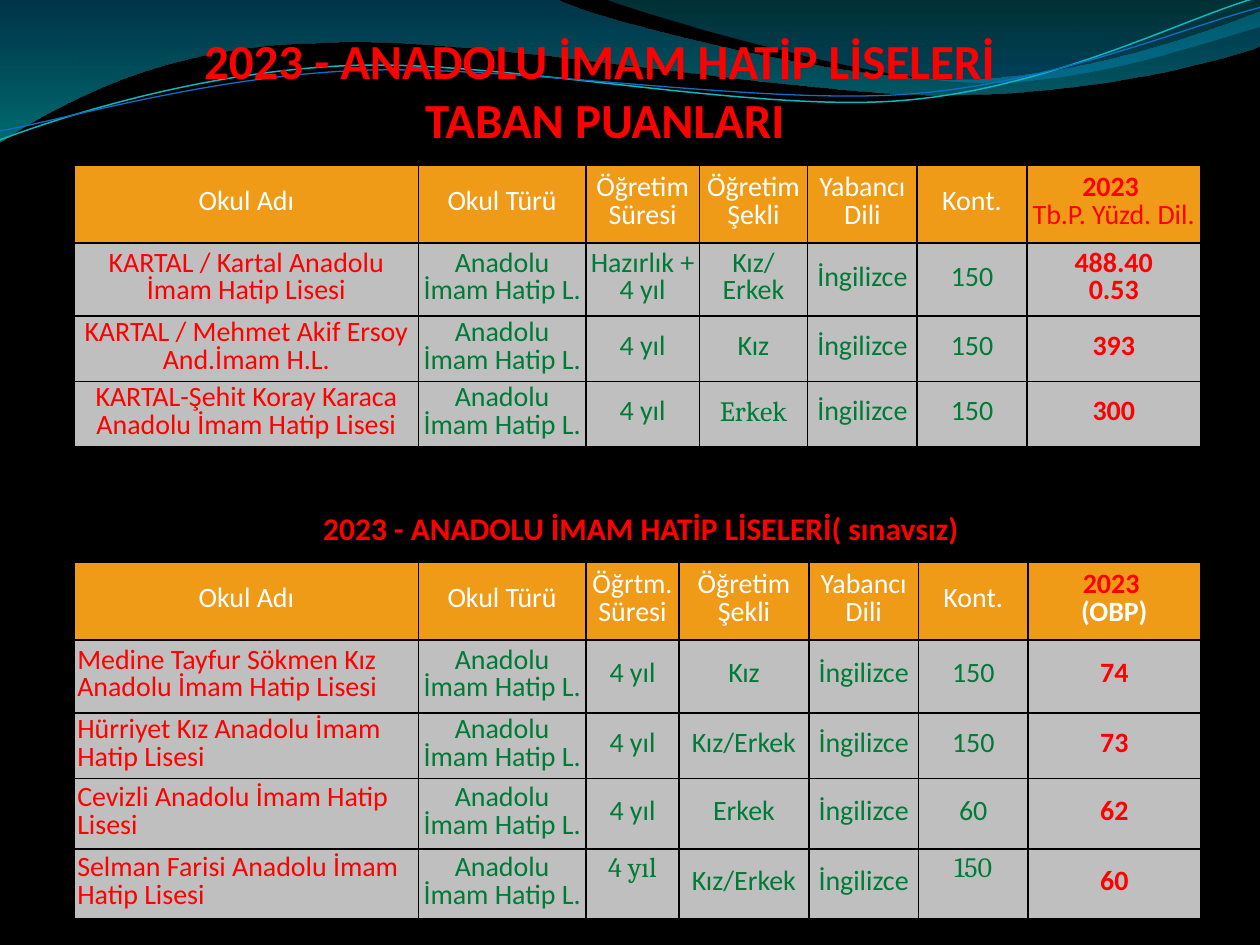
from dataclasses import dataclass
from math import cos, radians, sin
from typing import NamedTuple

from lxml.etree import SubElement
from pptx import Presentation
from pptx.dml.color import RGBColor
from pptx.enum.text import MSO_ANCHOR, MSO_AUTO_SIZE, PP_ALIGN
from pptx.oxml.ns import qn
from pptx.util import Pt

RED, GREEN, WHITE, BLACK = "FF0000", "007A37", "FFFFFF", "000000"
ORANGE, GREY = "EF9B18", "BFBFBF"
GRID_COLUMNS = 10
TILT = 2.7
SCHOOL_TYPE, LANGUAGE = "Anadolu İmam Hatip L.", "İngilizce"

presentation = Presentation()
presentation.slide_width = Pt(720)
presentation.slide_height = Pt(540)
UNIT = presentation.slide_width // GRID_COLUMNS


class Box(NamedTuple):
    left: float
    top: float
    width: float
    height: float


class Stop(NamedTuple):
    position: float
    color: str
    opacity: int


class School(NamedTuple):
    name: str
    duration: str
    mode: str
    quota: str
    score: str


@dataclass
class Wave:
    start: tuple
    segments: list
    stops: tuple = ()
    line: str = ""
    weight: float = 0
    pivot: tuple = ()


@dataclass
class ScoreTable:
    top: float
    columns: list
    rows: list
    duration_title: str
    score_title: str
    subtitle_color: str
    subtitle_bold: bool
    name_align: PP_ALIGN
    schools: list
    serif: tuple = ()
    raised: tuple = ()


def grid(value: float) -> int:
    return round(value * UNIT)


def rgb(color: str) -> RGBColor:
    return RGBColor.from_string(color)


def turn(point: tuple, pivot: tuple) -> tuple:
    x, y = point[0] - pivot[0], point[1] - pivot[1]
    c, s = cos(radians(TILT)), sin(radians(TILT))
    return pivot[0] + x * c - y * s, pivot[1] + x * s + y * c


def curve_segments(shape, segments: list) -> None:
    lines = iter(list(shape._element.iter(qn("a:lnTo"))))
    for segment in segments:
        first = next(lines)
        if len(segment) == 6:
            first.tag
            curve = first.makeelement(qn("a:cubicBezTo"))
            first.addprevious(curve)
            for line in (first, next(lines), next(lines)):
                curve.append(line[0])
                line.getparent().remove(line)


def draw_wave(slide, wave: Wave) -> None:
    points = [wave.start]
    for segment in wave.segments:
        points += zip(segment[::2], segment[1::2])
    if wave.pivot:
        points = [turn(point, wave.pivot) for point in points]
    vertices = [(grid(x), grid(y)) for x, y in points]
    builder = slide.shapes.build_freeform(*vertices[0], scale=1.0)
    builder.add_line_segments(vertices[1:], close=bool(wave.stops))
    shape = builder.convert_to_shape()
    curve_segments(shape, wave.segments)
    shape.shadow.inherit = False
    if not wave.stops:
        shape.rotation = 360 - TILT
        shape.fill.background()
        shape.line.color.rgb = rgb(wave.line)
        shape.line.width = Pt(wave.weight)
        return
    shape.line.fill.background()
    shape.fill.gradient()
    shape.fill.gradient_angle = 270
    for target, stop in zip(shape.fill.gradient_stops, wave.stops):
        target.position = stop.position
        target.color.rgb = rgb(stop.color)
    for element, stop in zip(shape._element.spPr.iter(qn("a:srgbClr")), wave.stops):
        SubElement(element, qn("a:alpha"), val=str(stop.opacity * 1000))


def format_paragraph(paragraph, size: float, color: str, bold: bool,
                     align: PP_ALIGN = PP_ALIGN.CENTER, font: str = "Calibri") -> None:
    paragraph.alignment = align
    for run in paragraph.runs:
        run.font.name, run.font.size, run.font.bold = font, Pt(size), bold
        run.font.color.rgb = rgb(color)


def write_heading(shape, box: Box, text: str, size: float) -> None:
    shape.left, shape.top, shape.width, shape.height = map(grid, box)
    frame = shape.text_frame
    frame.text = text
    frame.word_wrap = True
    frame.auto_size = MSO_AUTO_SIZE.SHAPE_TO_FIT_TEXT
    frame.vertical_anchor = MSO_ANCHOR.TOP
    for paragraph in frame.paragraphs:
        format_paragraph(paragraph, size, RED, True)


def write_cell(cell, text: str, fill: str, color: str, bold: bool,
               align: PP_ALIGN, font: str) -> None:
    cell.margin_left = cell.margin_right = cell.margin_top = cell.margin_bottom = Pt(1.7)
    cell.vertical_anchor = MSO_ANCHOR.MIDDLE
    properties = cell._tc.get_or_add_tcPr()
    for side in ("a:lnL", "a:lnR", "a:lnT", "a:lnB"):
        border = SubElement(properties, qn(side), w=str(Pt(1)))
        SubElement(SubElement(border, qn("a:solidFill")), qn("a:srgbClr"), val=BLACK)
    cell.fill.solid()
    cell.fill.fore_color.rgb = rgb(fill)
    cell.text_frame.text = text
    for paragraph in cell.text_frame.paragraphs:
        paragraph.line_spacing = Pt(15.9)
        format_paragraph(paragraph, 16, color, bold, align, font)


def draw_table(slide, spec: ScoreTable) -> None:
    titles = ["Okul Adı", "Okul Türü", spec.duration_title, "Öğretim Şekli",
              "Yabancı Dili", "Kont.", spec.score_title]
    body = [[s.name, SCHOOL_TYPE, s.duration, s.mode, LANGUAGE, s.quota, s.score]
            for s in spec.schools]
    box = Box(0.59, spec.top, sum(spec.columns), sum(spec.rows))
    table = slide.shapes.add_table(len(spec.rows), len(titles), *map(grid, box)).table
    table.first_row = table.horz_banding = False
    for column, width in zip(table.columns, spec.columns):
        column.width = grid(width)
    for row, height in zip(table.rows, spec.rows):
        row.height = grid(height)
    last = len(titles) - 1
    for r, texts in enumerate([titles] + body):
        for c, text in enumerate(texts):
            plain = WHITE if r == 0 else GREEN
            color = RED if c == last or (r and c == 0) else plain
            align = spec.name_align if r and c == 0 else PP_ALIGN.CENTER
            font = "Cambria" if (r, c) in spec.serif else "Calibri"
            write_cell(table.cell(r, c), text, GREY if r else ORANGE, color, c == last, align, font)
    subtitle = table.cell(0, last).text_frame.paragraphs[1]
    format_paragraph(subtitle, 16, spec.subtitle_color, spec.subtitle_bold)
    for position in spec.raised:
        table.cell(*position).vertical_anchor = MSO_ANCHOR.TOP
        table.cell(*position).margin_top = grid(0.06)


WAVES = [
    Wave((0, -0.01), [(4.4, -0.01), (4.76, 0.17, 6.64, 0.63, 7.58, 0.63),
                      (8.53, 0.63, 9.58, 0.26, 10, 0.09), (10.01, 0.36),
                      (9.83, 0.44, 8.7, 0.76, 7.46, 0.75), (6.22, 0.75, 3.82, 0.28, 2.57, 0.34),
                      (1.29, 0.35, 0.46, 0.83, -0.01, 1.13), (0, -0.01)],
         stops=(Stop(0, "0074A1", 45), Stop(1, "00C6CF", 55))),
    Wave((4.79, -0.01), [(5.09, 0.11, 6.82, 0.62, 7.69, 0.65),
                         (8.56, 0.69, 9.61, 0.32, 10, 0.21), (10, 0), (4.79, -0.01)],
         stops=(Stop(0, "00A1A9", 30), Stop(0.8, "008BBF", 45))),
    Wave((0, 1.11), [(0.48, 0.93, 1.58, 0.57, 2.77, 0.52), (3.95, 0.47, 5.93, 0.89, 7.13, 0.8),
                     (8.33, 0.71, 9.38, 0.15, 9.98, -0.02)],
         line="0AB8BF", weight=0.85, pivot=(4.99, 0.57)),
    Wave((0, 1.04), [(0.47, 0.96, 1.64, 0.61, 2.83, 0.56), (4.03, 0.51, 5.97, 0.83, 7.17, 0.75),
                     (8.36, 0.67, 9.41, 0.21, 10, 0.06)],
         line="0F6FC6", weight=0.75, pivot=(5, 0.59)),
]

EXAM_SCORES = ScoreTable(
    1.31, [2.73, 1.33, 0.9, 0.86, 0.87, 0.87, 1.38], [0.62, 0.58, 0.52, 0.52],
    "Öğretim Süresi", "2023 \nTb.P. Yüzd. Dil.", RED, False, PP_ALIGN.CENTER,
    [School("KARTAL / Kartal Anadolu İmam Hatip Lisesi", "Hazırlık + 4 yıl", "Kız/Erkek",
            "150", "488.40\n0.53"),
     School("KARTAL / Mehmet Akif Ersoy And.İmam H.L.", "4 yıl", "Kız", "150", "393"),
     School("KARTAL-Şehit Koray Karaca Anadolu İmam Hatip Lisesi", "4 yıl", "Erkek", "150", "300")],
    serif=((3, 3),))

OPEN_SCORES = ScoreTable(
    4.46, [2.73, 1.33, 0.74, 1.03, 0.87, 0.87, 1.37], [0.62, 0.58, 0.52, 0.56, 0.55],
    "Öğrtm. Süresi", "2023 \n(OBP)", WHITE, True, PP_ALIGN.LEFT,
    [School("Medine Tayfur Sökmen Kız Anadolu İmam Hatip Lisesi", "4 yıl", "Kız", "150", "74"),
     School("Hürriyet Kız Anadolu İmam Hatip Lisesi", "4 yıl", "Kız/Erkek", "150", "73"),
     School("Cevizli Anadolu İmam Hatip Lisesi", "4 yıl", "Erkek", "60", "62"),
     School("Selman Farisi Anadolu İmam Hatip Lisesi", "4 yıl", "Kız/Erkek", "150", "60")],
    serif=((4, 2), (4, 5)), raised=((4, 2), (4, 5)))

slide = presentation.slides.add_slide(presentation.slide_layouts[5])
slide.background.fill.solid()
slide.background.fill.fore_color.rgb = rgb(BLACK)
for wave in WAVES:
    draw_wave(slide, wave)
heading = slide.shapes.title
slide.shapes._spTree.append(heading._element)
write_heading(heading, Box(1.14, 0.19, 7.32, 1.04),
              "2023 - ANADOLU İMAM HATİP LİSELERİ \nTABAN PUANLARI", 28)
draw_table(slide, EXAM_SCORES)
open_heading = slide.shapes.add_textbox(0, 0, UNIT, UNIT)
write_heading(open_heading, Box(1.77, 3.99, 6.69, 0.4),
              "2023 - ANADOLU İMAM HATİP LİSELERİ( sınavsız) ", 18)
draw_table(slide, OPEN_SCORES)
presentation.save("out.pptx")
